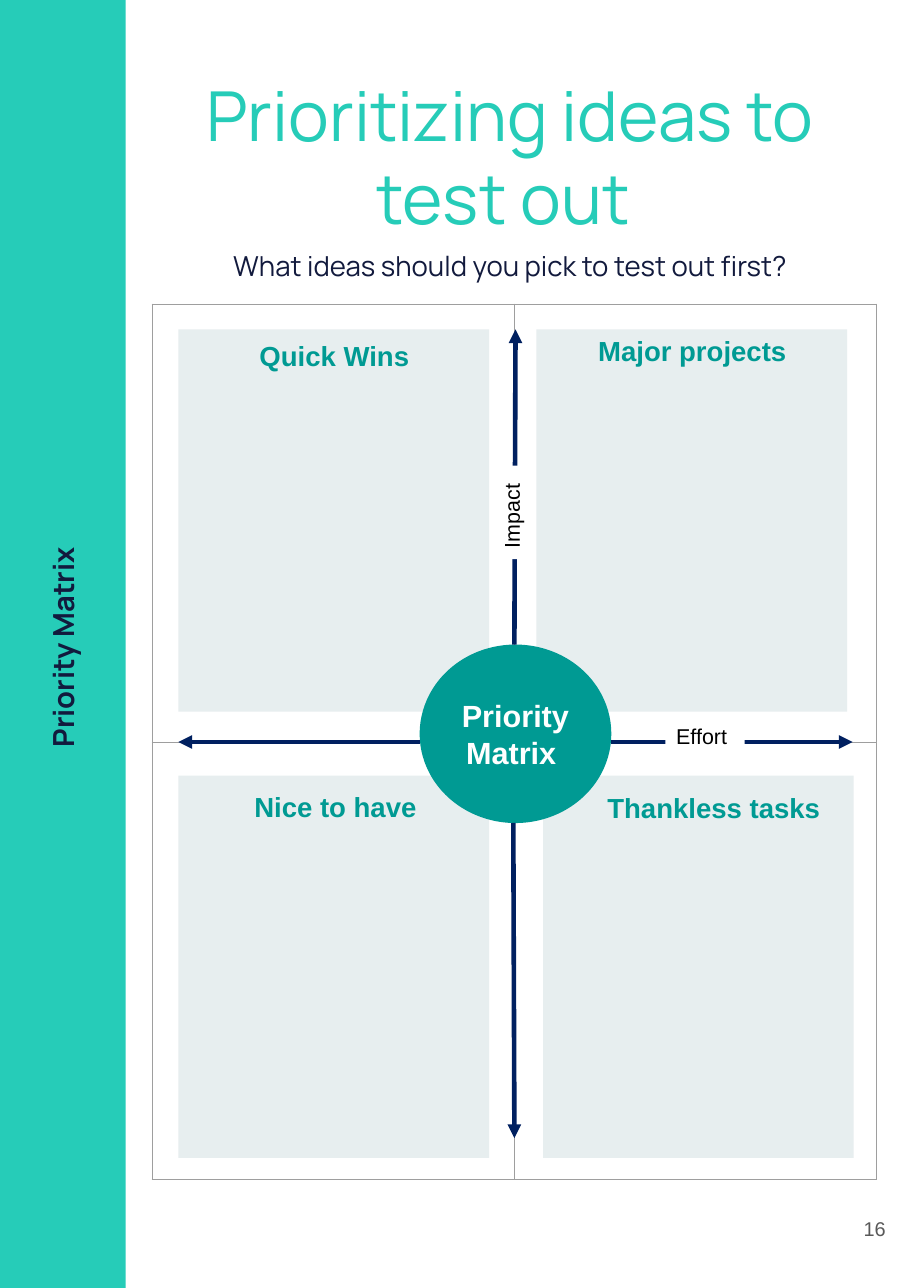
from lxml import etree
from pptx import Presentation
from pptx import util as u
from pptx.dml.color import RGBColor
from pptx.enum import shapes, text
from pptx.oxml import ns

In = u.Inches
COLORS = {"mint": "26CCB8", "ink": "121A3D", "teal": "009A93", "panel": "E7EEEF",
          "navy": "002060", "border": "9E9E9E", "grey": "595959",
          "white": "FFFFFF", "black": "000000"}


def rgb(name):
    """Look up a palette colour."""
    return RGBColor.from_string(COLORS[name])


def write(shape, wording, size, color, font="Arial", bold=False, align="CENTER",
          anchor="TOP", inset=(0.1, 0.05)):
    """Fill a shape with one formatted paragraph."""
    frame = shape.text_frame
    frame.word_wrap = True
    frame.auto_size = text.MSO_AUTO_SIZE.NONE
    frame.vertical_anchor = getattr(text.MSO_ANCHOR, anchor)
    frame.margin_left = frame.margin_right = In(inset[0])
    frame.margin_top = frame.margin_bottom = In(inset[1])
    frame.text = wording
    paragraph = frame.paragraphs[0]
    paragraph.alignment = getattr(text.PP_ALIGN, align)
    paragraph.font.name = font
    paragraph.font.size = u.Pt(size)
    paragraph.font.bold = bold
    paragraph.font.color.rgb = rgb(color)
    return paragraph


def place(shape, box):
    """Move a shape to a box."""
    shape.left, shape.top, shape.width, shape.height = map(In, box)


def add_block(slide, box, color, kind=shapes.MSO_SHAPE.RECTANGLE):
    """Add a flat filled shape."""
    block = slide.shapes.add_shape(kind, *map(In, box))
    block.shadow.inherit = False
    block.fill.solid()
    block.fill.fore_color.rgb = rgb(color)
    block.line.fill.background()
    return block


def add_label(slide, box, *args, **style):
    """Add a text box with one paragraph."""
    label = slide.shapes.add_textbox(*map(In, box))
    write(label, *args, **style)
    return label


def add_arrow(slide, start, end):
    """Add a navy arrow pointing at its end."""
    arrow = slide.shapes.add_connector(shapes.MSO_CONNECTOR.STRAIGHT,
                                       *map(In, start + end))
    arrow.line.color.rgb = rgb("navy")
    arrow.line.width = u.Pt(3)
    etree.SubElement(arrow.line._get_or_add_ln(), ns.qn("a:tailEnd"), type="triangle")
    etree.SubElement(arrow._element.spPr, ns.qn("a:effectLst"))


def add_sidebar(slide, box):
    """Draw the side band with its upright section name."""
    left, top, width, height = box
    add_block(slide, box, "mint")
    length, depth = 10.59, 0.52
    section = add_label(slide, (left + (width - length) / 2 + 0.02, top + 5.59, length, depth),
                        "Priority Matrix ", 19, "ink", font="Manrope", bold=True,
                        inset=(0.1, 0.1))
    section.rotation = 270


def add_heading(slide, box):
    """Place the title and the question under it."""
    left, top, width, height = box
    title, question = slide.placeholders
    place(title, (left, top, width, 1.7))
    write(title, "Prioritizing ideas to test out ", 45, "mint", font="Manrope",
          inset=(0.1, 0.1))
    place(question, (left, top + 1.7, width, height - 1.7))
    line = write(question, "What ideas should you pick to test out first?", 18, "ink",
                 font="Manrope", inset=(0.1, 0))
    line.space_before = u.Pt(0)


def add_grid(slide, box):
    """Draw the two by two outline as a table."""
    table = slide.shapes.add_table(2, 2, *map(In, box)).table
    table.first_row = table.horz_banding = False
    for cell in table.iter_cells():
        cell.fill.background()
        props = cell._tc.get_or_add_tcPr()
        for index, side in enumerate(("lnL", "lnR", "lnT", "lnB")):
            edge = etree.Element(ns.qn("a:" + side), w=str(u.Pt(0.75)))
            fill = etree.SubElement(edge, ns.qn("a:solidFill"))
            etree.SubElement(fill, ns.qn("a:srgbClr"), val=COLORS["border"])
            props.insert(index, edge)


def add_matrix(slide, box):
    """Draw the quadrants, the axes and the hub inside a box."""
    left, top, width, height = box
    add_grid(slide, box)

    quadrants = [
        ("Quick Wins", 0.24, 0.23, (0.41, 0.04, 2.01)),
        ("Major projects", 3.49, 0.23, (0.41, -0.01, 2.01)),
        ("Nice to have", 0.24, 4.28, (0.42, 0.08, 2.01)),
        ("Thankless tasks", 3.55, 4.28, (0.4, 0.09, 2.3)),
    ]
    for name, dx, dy, heading in quadrants:
        add_block(slide, (left + dx, top + dy, 2.82, 3.47), "panel")

    hub_left, hub_top, hub_width, hub_height = left + 2.43, top + 3.09, 1.74, 1.62
    hub = add_block(slide, (hub_left, hub_top, hub_width, hub_height), "teal",
                    shapes.MSO_SHAPE.OVAL)
    write(hub, "Priority Matrix ", 20, "white", bold=True, anchor="MIDDLE")

    axis_x, axis_y = left + width / 2, top + height / 2
    add_arrow(slide, (axis_x, hub_top), (axis_x + 0.01, top + 0.23))
    add_arrow(slide, (axis_x - 0.01, hub_top + hub_height), (axis_x, top + 7.57))
    add_arrow(slide, (hub_left, axis_y), (left + 0.24, axis_y))
    add_arrow(slide, (hub_left + hub_width, axis_y), (left + 6.36, axis_y))

    for axis, dx, dy, length, turn in (("Impact", 2.84, 1.72, 0.85, 270),
                                       ("Effort", 4.66, 3.75, 0.72, 0)):
        tag = add_block(slide, (left + dx, top + dy, length, 0.34), "white")
        write(tag, axis, 14, "black", align="LEFT")
        tag.rotation = turn

    for name, dx, dy, (name_dx, name_dy, name_width) in quadrants:
        add_label(slide, (left + dx + name_dx, top + dy + name_dy, name_width, 0.4),
                  name, 18, "teal", bold=True)


def build():
    """Assemble the page and save it."""
    deck = Presentation()
    deck.slide_width, deck.slide_height = In(8.27), In(11.69)
    slide = deck.slides.add_slide(deck.slide_layouts[0])
    add_sidebar(slide, (-0.04, 0, 1.18, 11.69))
    add_heading(slide, (1.14, 0.56, 6.98, 2.21))
    add_label(slide, (7.67, 10.71, 0.5, 0.89), "16", 13, "grey", align="RIGHT",
              anchor="MIDDLE", inset=(0.13, 0.13))
    add_matrix(slide, (1.38, 2.76, 6.58, 7.95))
    deck.save("out.pptx")


if __name__ == "__main__":
    build()
